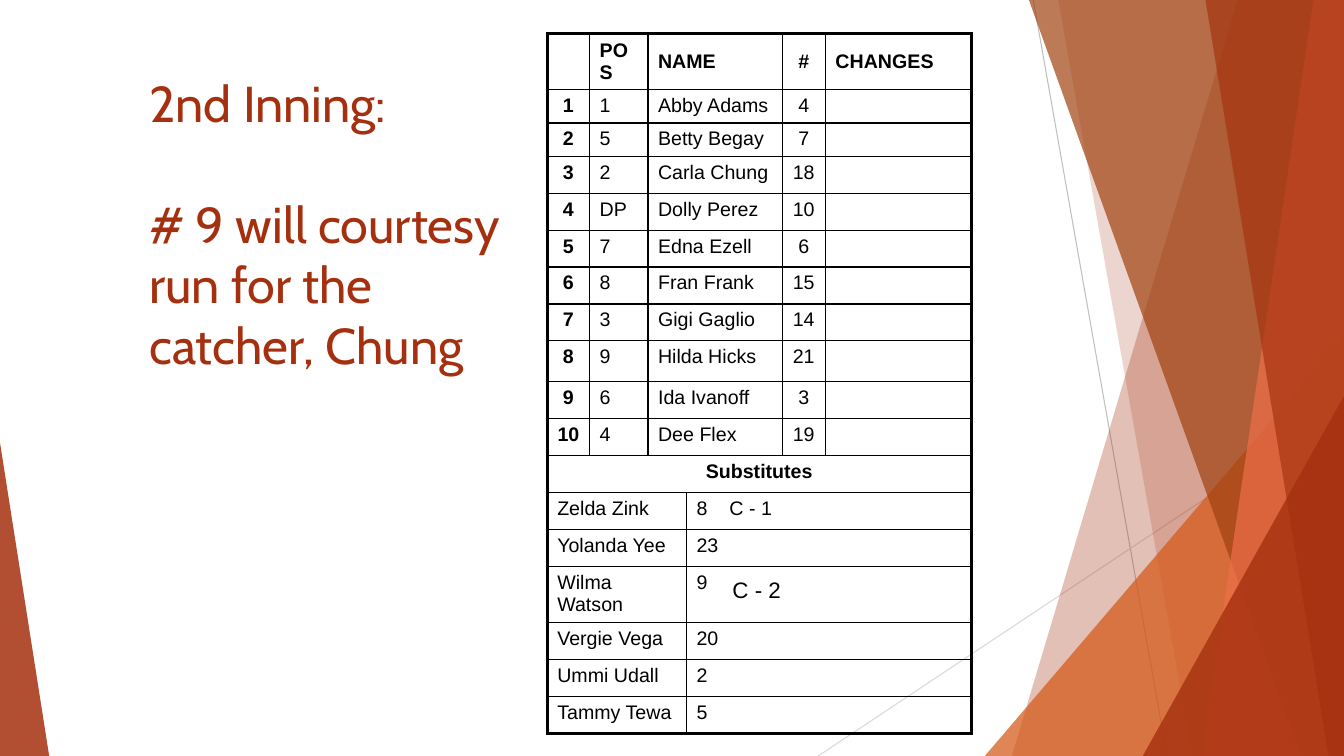
from lxml import etree
from pptx import Presentation
from pptx.dml.color import RGBColor
from pptx.enum.shapes import MSO_CONNECTOR, MSO_SHAPE
from pptx.enum.text import MSO_ANCHOR, PP_ALIGN
from pptx.oxml.ns import qn
from pptx.util import Cm, Pt

STRAIGHT = MSO_CONNECTOR.STRAIGHT
TRIANGLE = MSO_SHAPE.ISOSCELES_TRIANGLE
MIDDLE, TOP = MSO_ANCHOR.MIDDLE, MSO_ANCHOR.TOP
LEFT, CENTER = PP_ALIGN.LEFT, PP_ALIGN.CENTER

SLIDE_W, SLIDE_H = 33.87, 19.05
COLORS = {
    "black": "000000",
    "rust": "A5300F",
    "orange": "D55816",
    "brown": "A04210",
    "coral": "EE6E4A",
    "gray": "BFBFBF",
    "light_gray": "D9D9D9",
}
COL_WIDTHS = [1.07, 1.47, 0.97, 2.41, 1.09, 3.68]
ROW_HEIGHTS = [1.42] + [0.84] * 2 + [0.93] * 5 + [1.03] + [0.93] * 5 + [1.42] + [0.93] * 3
LINEUP = [
    ("1", "Abby Adams", "4"),
    ("5", "Betty Begay", "7"),
    ("2", "Carla Chung", "18"),
    ("DP", "Dolly Perez", "10"),
    ("7", "Edna Ezell", "6"),
    ("8", "Fran Frank", "15"),
    ("3", "Gigi Gaglio", "14"),
    ("9", "Hilda Hicks", "21"),
    ("6", "Ida Ivanoff", "3"),
    ("4", "Dee Flex", "19"),
]
SUBSTITUTES = [
    ("Zelda Zink", "8\tC - 1"),
    ("Yolanda Yee", "23"),
    ("Wilma Watson", "9"),
    ("Vergie Vega", "20"),
    ("Ummi Udall", "2"),
    ("Tammy Tewa", "5"),
]


def rgb(name):
    return RGBColor.from_string(COLORS[name])


def style_font(p, size, color="black", name="Arial", bold=False):
    p.font.size = Pt(size)
    p.font.name = name
    p.font.bold = bold
    p.font.color.rgb = rgb(color)


def paint(sp, color, alpha):
    sp.shadow.inherit = False
    sp.line.fill.background()
    sp.fill.solid()
    sp.fill.fore_color.rgb = rgb(color)
    clr = sp._element.spPr.find(qn("a:solidFill"))[0]
    etree.SubElement(clr, qn("a:alpha"), val=str(alpha * 1000))


def add_line(s, x1, y1, x2, y2, color):
    line = s.shapes.add_connector(STRAIGHT, Cm(x1), Cm(y1), Cm(x2), Cm(y2))
    line.line.color.rgb = rgb(color)
    line.line.width = Pt(0.75)
    etree.SubElement(line._element.spPr, qn("a:effectLst"))


def add_panel(s, top_x, bottom_x, color, alpha):
    builder = s.shapes.build_freeform(Cm(top_x), 0)
    corners = [(SLIDE_W, 0), (SLIDE_W, SLIDE_H), (bottom_x, SLIDE_H)]
    builder.add_line_segments([(Cm(x), Cm(y)) for x, y in corners], close=True)
    paint(builder.convert_to_shape(), color, alpha)


def add_triangle(s, left, top, right, apex, color, alpha):
    sp = s.shapes.add_shape(TRIANGLE, Cm(left), Cm(top), Cm(right - left), Cm(SLIDE_H - top))
    sp.adjustments[0] = apex
    paint(sp, color, alpha)


def add_text(s, left, top, width, height, paragraphs, size, color, name):
    tf = s.shapes.add_textbox(Cm(left), Cm(top), Cm(width), Cm(height)).text_frame
    tf.word_wrap = True
    tf.text = "\n".join(paragraphs)
    for p in tf.paragraphs:
        style_font(p, size, color, name)
    return tf


def set_borders(cell, outer):
    tc_pr = cell._tc.get_or_add_tcPr()
    for side in "LRTB":
        width = Pt(2.25) if outer[side] else Pt(1)
        ln = etree.SubElement(tc_pr, qn(f"a:ln{side}"), w=str(width))
        fill = etree.SubElement(ln, qn("a:solidFill"))
        etree.SubElement(fill, qn("a:srgbClr"), val=COLORS["black"])
    cell.fill.background()


def set_tab(p, position):
    tabs = etree.Element(qn("a:tabLst"))
    etree.SubElement(tabs, qn("a:tab"), pos=str(Cm(position)), algn="l")
    p._p.get_or_add_pPr().find(qn("a:defRPr")).addprevious(tabs)


def fill_cell(table, row, col, text, span=1, bold=False, align=LEFT, anchor=TOP):
    cell = table.cell(row, col)
    last_row, last_col = len(ROW_HEIGHTS) - 1, len(COL_WIDTHS) - 1
    end = col + span - 1
    if span > 1:
        cell.merge(table.cell(row, end))
    set_borders(cell, {"L": col == 0, "R": end == last_col, "T": row == 0, "B": row == last_row})
    cell.vertical_anchor = anchor
    cell.text = text
    p = cell.text_frame.paragraphs[0]
    p.alignment = align
    style_font(p, 14, bold=bold)
    if "\t" in text:
        set_tab(p, 0.83)


def add_player_row(table, row, order, pos, name, number, changes="", header=False):
    anchor = MIDDLE if header else TOP
    fill_cell(table, row, 0, order, bold=True, align=CENTER, anchor=anchor)
    fill_cell(table, row, 1, pos, bold=header, anchor=anchor)
    fill_cell(table, row, 2, name, span=2, bold=header, anchor=anchor)
    fill_cell(table, row, 4, number, bold=header, align=CENTER, anchor=anchor)
    fill_cell(table, row, 5, changes, bold=header, anchor=anchor)


def add_lineup_card(s, left, top):
    table = s.shapes.add_table(
        len(ROW_HEIGHTS), len(COL_WIDTHS), Cm(left), Cm(top),
        Cm(sum(COL_WIDTHS)), Cm(sum(ROW_HEIGHTS)),
    ).table
    table.first_row = table.horz_banding = False
    for column, width in zip(table.columns, COL_WIDTHS):
        column.width = Cm(width)
    for row, height in zip(table.rows, ROW_HEIGHTS):
        row.height = Cm(height)
    add_player_row(table, 0, "", "POS", "NAME", "#", "CHANGES", header=True)
    for order, player in enumerate(LINEUP, 1):
        add_player_row(table, order, str(order), *player)
    subs_row = len(LINEUP) + 1
    fill_cell(table, subs_row, 0, "Substitutes", span=6, bold=True, align=CENTER)
    for row, (name, number) in enumerate(SUBSTITUTES, subs_row + 1):
        fill_cell(table, row, 0, name, span=3)
        fill_cell(table, row, 3, number, span=3)


def add_backdrop(s):
    add_line(s, 26.04, 0, 29.41, SLIDE_H, "gray")
    add_line(s, SLIDE_W, 10.24, 20.62, SLIDE_H, "light_gray")
    add_panel(s, 31.19, 25.5, "rust", 30)
    add_panel(s, 26.67, 30.05, "rust", 20)
    add_triangle(s, 24.82, 8.46, SLIDE_W, 1, "orange", 72)
    add_panel(s, 25.93, 32.79, "brown", 70)
    add_panel(s, 33.1, 30.28, "coral", 70)
    add_panel(s, 30.38, 33.48, "rust", 65)
    add_triangle(s, 28.8, 9.98, SLIDE_W, 1, "rust", 80)
    add_triangle(s, 0, 11.15, 1.24, 0, "rust", 85)


def main():
    prs = Presentation()
    prs.slide_width, prs.slide_height = Cm(SLIDE_W), Cm(SLIDE_H)
    s = prs.slides.add_slide(prs.slide_layouts[6])
    add_backdrop(s)
    add_lineup_card(s, 13.79, 0.84)
    title = ["2nd Inning:", "# 9 will courtesy run for the catcher, Chung"]
    tf = add_text(s, 3.51, 1.7, 9.83, 15.04, title, 36, "rust", "Cabin")
    tf.paragraphs[1].space_before = Pt(43)
    add_text(s, 18.21, 14.4, 2.01, 0.94, ["C - 2"], 16, "black", "Arial")
    prs.save("out.pptx")


if __name__ == "__main__":
    main()
